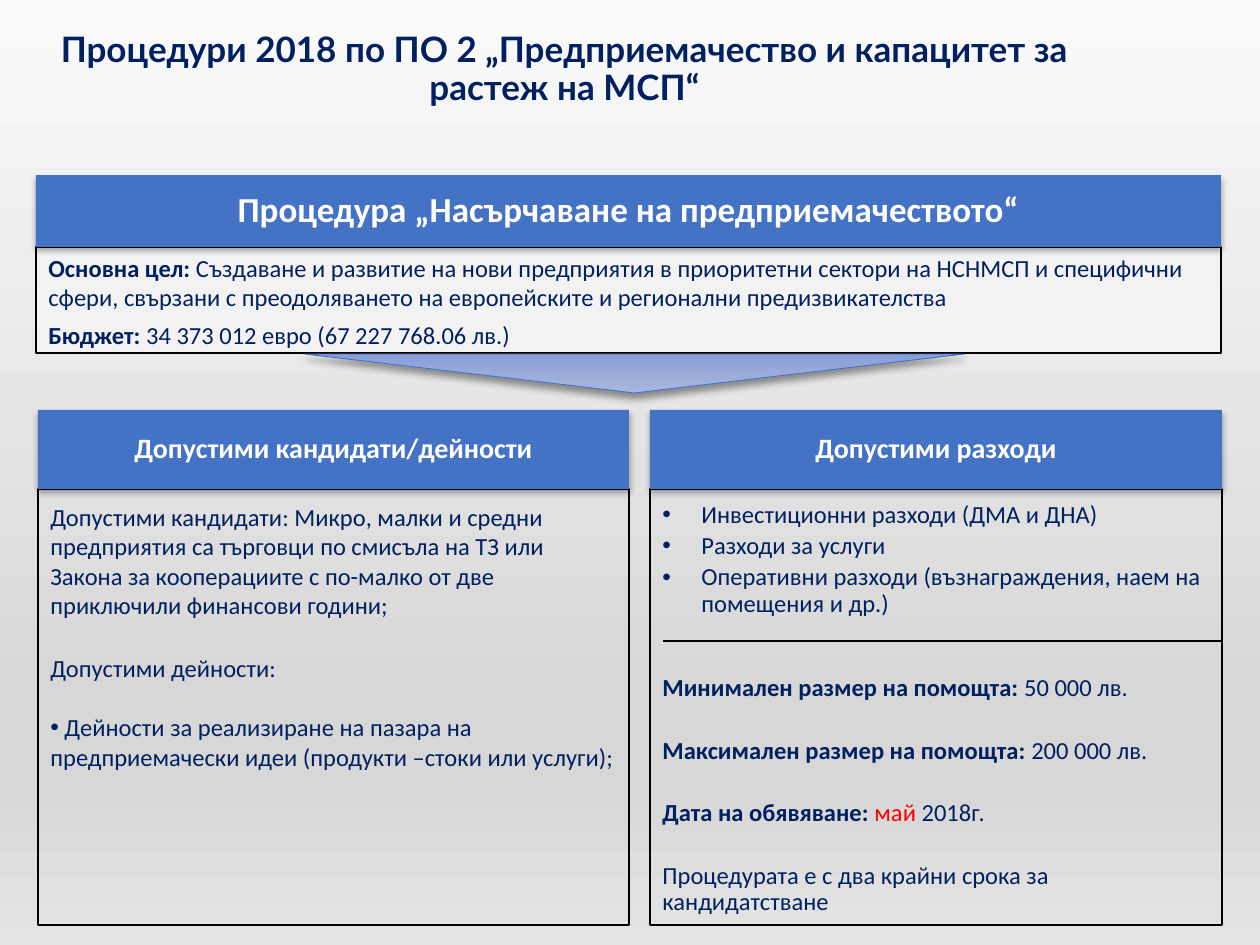
from dataclasses import dataclass
from typing import Optional

import pptx
import pptx.dml.color
import pptx.enum.shapes
import pptx.enum.text
import pptx.oxml.ns
import pptx.oxml.xmlchemy
import pptx.util
from lxml import etree

RGBColor = pptx.dml.color.RGBColor
Shapes = pptx.enum.shapes.MSO_SHAPE
Anchor = pptx.enum.text.MSO_ANCHOR
Align = pptx.enum.text.PP_ALIGN
qn = pptx.oxml.ns.qn

NAVY = RGBColor(0x00, 0x20, 0x60)
BLUE = RGBColor(0x44, 0x72, 0xC4)
RED = RGBColor(0xFF, 0x00, 0x00)
WHITE = RGBColor(0xFF, 0xFF, 0xFF)
BLACK = RGBColor(0x00, 0x00, 0x00)
PALE = RGBColor(0xF2, 0xF2, 0xF2)
PX_PER_INCH = 126


@dataclass(frozen=True)
class Area:
    left: int
    top: int
    width: int
    height: int


@dataclass(frozen=True)
class Run:
    text: str
    bold: bool = False
    color: RGBColor = NAVY


@dataclass(frozen=True)
class Para:
    runs: tuple[Run, ...]
    before: float = 0
    spacing: float = 1.0
    bullet: bool = False
    hanging: int = 0


@dataclass(frozen=True)
class Column:
    left: int
    width: int
    heading: str
    paragraphs: tuple[Para, ...]


def px(length: int) -> int:
    return pptx.util.Emu(round(length * 914400 / PX_PER_INCH))


def bounds(area: Area) -> tuple[int, ...]:
    return px(area.left), px(area.top), px(area.width), px(area.height)


def set_gradient(fill, root, stops: dict[int, str]) -> None:
    fill.gradient()
    fill.gradient_angle = 270
    stop_list = root.find(".//" + qn("a:gsLst"))
    for stop in list(stop_list):
        stop_list.remove(stop)
    for position, color in stops.items():
        stop = etree.SubElement(stop_list, qn("a:gs"), pos=str(position * 1000))
        etree.SubElement(stop, qn("a:srgbClr"), val=color)


def add_shadow(shape, opacity: int, blur: float, distance: float) -> None:
    effects = shape.element.spPr.find(qn("a:effectLst"))
    shadow = etree.SubElement(
        effects, qn("a:outerShdw"), blurRad=str(pptx.util.Pt(blur)),
        dist=str(pptx.util.Pt(distance)), dir="5400000", rotWithShape="0")
    color = etree.SubElement(shadow, qn("a:srgbClr"), val="000000")
    etree.SubElement(color, qn("a:alpha"), val=str(opacity * 1000))


def add_bullet(paragraph, hanging: int) -> None:
    properties = paragraph._p.get_or_add_pPr()
    properties.set("marL", str(px(hanging)))
    properties.set("indent", str(-px(hanging)))
    etree.SubElement(properties, qn("a:buFont"), typeface="Arial")
    etree.SubElement(properties, qn("a:buChar"), char="•")


def write(frame, paragraphs: tuple[Para, ...], size: int, align, font: str = "Calibri") -> None:
    frame.word_wrap = True
    for index, content in enumerate(paragraphs):
        paragraph = frame.add_paragraph() if index else frame.paragraphs[0]
        if content.bullet:
            add_bullet(paragraph, content.hanging)
        paragraph.alignment = align
        paragraph.line_spacing = content.spacing
        paragraph.space_before = pptx.util.Pt(content.before)
        for part in content.runs:
            run = paragraph.add_run()
            run.text = part.text
            run.font.name = font
            run.font.size = pptx.util.Pt(size)
            run.font.bold = part.bold
            run.font.color.rgb = part.color


def add_panel(shapes, area: Area, paragraphs: tuple[Para, ...], inset: int = 13,
              fill: Optional[RGBColor] = None) -> None:
    panel = shapes.add_shape(Shapes.RECTANGLE, *bounds(area))
    panel.shadow.inherit = False
    if fill is None:
        panel.fill.background()
    else:
        panel.fill.solid()
        panel.fill.fore_color.rgb = fill
    panel.line.color.rgb = BLACK
    panel.line.width = pptx.util.Pt(1)
    frame = panel.text_frame
    frame.vertical_anchor = Anchor.TOP
    frame.margin_top = frame.margin_bottom = px(inset)
    write(frame, paragraphs, 14, Align.LEFT)


def add_heading(shapes, area: Area, text: str, size: int) -> None:
    heading = shapes.add_shape(Shapes.RECTANGLE, *bounds(area))
    heading.shadow.inherit = False
    add_shadow(heading, 32, 3.5, 2.2)
    heading.fill.solid()
    heading.fill.fore_color.rgb = BLUE
    heading.line.fill.background()
    heading.text_frame.vertical_anchor = Anchor.MIDDLE
    write(heading.text_frame, (Para((Run(text, True, WHITE),), spacing=0.9),), size, Align.CENTER)


def add_divider(shapes, left: int, right: int, y: int) -> None:
    divider = shapes.add_connector(
        pptx.enum.shapes.MSO_CONNECTOR.STRAIGHT, px(left), px(y), px(right), px(y))
    divider.line.color.rgb = BLACK
    divider.line.width = pptx.util.Pt(0.75)
    etree.SubElement(divider.element.spPr, qn("a:effectLst"))


def add_pointer(shapes, area: Area) -> None:
    pointer = shapes.add_shape(Shapes.ISOSCELES_TRIANGLE, *bounds(area))
    pointer.rotation = 180
    pointer.shadow.inherit = False
    set_gradient(pointer.fill, pointer.element, {0: "A8B7DF", 50: "9AABD9", 100: "889ED7"})
    pointer.line.color.rgb = BLUE
    pointer.line.width = pptx.util.Pt(0.5)
    add_shadow(pointer, 40, 4, 3)


def cost(text: str, before: float = 2.8) -> Para:
    return Para((Run(text),), before, 0.9, True, 39)


def fact(*runs: Run, before: float = 20.6) -> Para:
    return Para(runs, before, 0.9)


GOAL = (
    Para((Run("Основна цел: ", True),
          Run("Създаване и развитие на нови предприятия в приоритетни сектори на НСНМСП и "
              "специфични сфери, свързани с преодоляването на европейските и регионални "
              "предизвикателства"))),
    Para((Run("Бюджет: ", True), Run("34 373 012 евро (67 227 768.06 лв.)")), 4.9),
)
COLUMNS = (
    Column(38, 591, "Допустими кандидати/дейности", (
        Para((Run("Допустими кандидати: Микро, малки и средни предприятия са търговци по смисъла "
                  "на ТЗ или Закона за кооперациите с по-малко от две приключили финансови "
                  "години;"),)),
        Para((Run("Допустими дейности:"),), 20.9, 0.9),
        Para((Run(" Дейности за реализиране на пазара на предприемачески идеи (продукти –стоки "
                  "или услуги);"),), 16.8, bullet=True),
    )),
    Column(650, 572, "Допустими разходи", (
        cost("Инвестиционни разходи (ДМА и ДНА)", 0),
        cost("Разходи за услуги"),
        cost("Оперативни разходи (възнаграждения, наем на помещения и др.)"),
        fact(Run("Минимален размер на помощта: ", True), Run("50 000 лв."), before=32.9),
        fact(Run("Максимален размер на помощта: ", True), Run("200 000 лв.")),
        fact(Run("Дата на обявяване: ", True), Run("май ", color=RED), Run("2018г.")),
        fact(Run("Процедурата е с два крайни срока за кандидатстване")),
    )),
)


def main() -> None:
    deck = pptx.Presentation()
    deck.slide_width, deck.slide_height = px(1260), px(945)
    slide = deck.slides.add_slide(deck.slide_layouts[5])
    set_gradient(slide.background.fill, slide.element,
                 {0: "FAFAFA", 74: "D7D7D7", 83: "D7D7D7", 100: "E4E4E4"})

    title = slide.shapes.title
    title.left, title.top, title.width, title.height = bounds(Area(18, 26, 1093, 149))
    title.text_frame.vertical_anchor = Anchor.TOP
    heading = Run("Процедури 2018 по ПО 2 „Предприемачество и капацитет за растеж на МСП“", True)
    write(title.text_frame, (Para((heading,), spacing=0.9),), 20, Align.CENTER, "Lato")

    procedure = slide.shapes.add_group_shape().shapes
    add_panel(procedure, Area(36, 247, 1185, 106), GOAL, 6, PALE)
    add_heading(procedure, Area(36, 175, 1185, 72),
                "Процедура „Насърчаване на предприемачеството“", 20)

    for column in COLUMNS:
        add_panel(slide.shapes, Area(column.left, 489, column.width, 436), column.paragraphs)
    for column in COLUMNS:
        add_heading(slide.shapes, Area(column.left, 410, column.width, 79), column.heading, 16)
    add_divider(slide.shapes, 663, 1221, 641)
    add_pointer(slide.shapes, Area(305, 354, 659, 39))
    deck.save("out.pptx")


if __name__ == "__main__":
    main()
